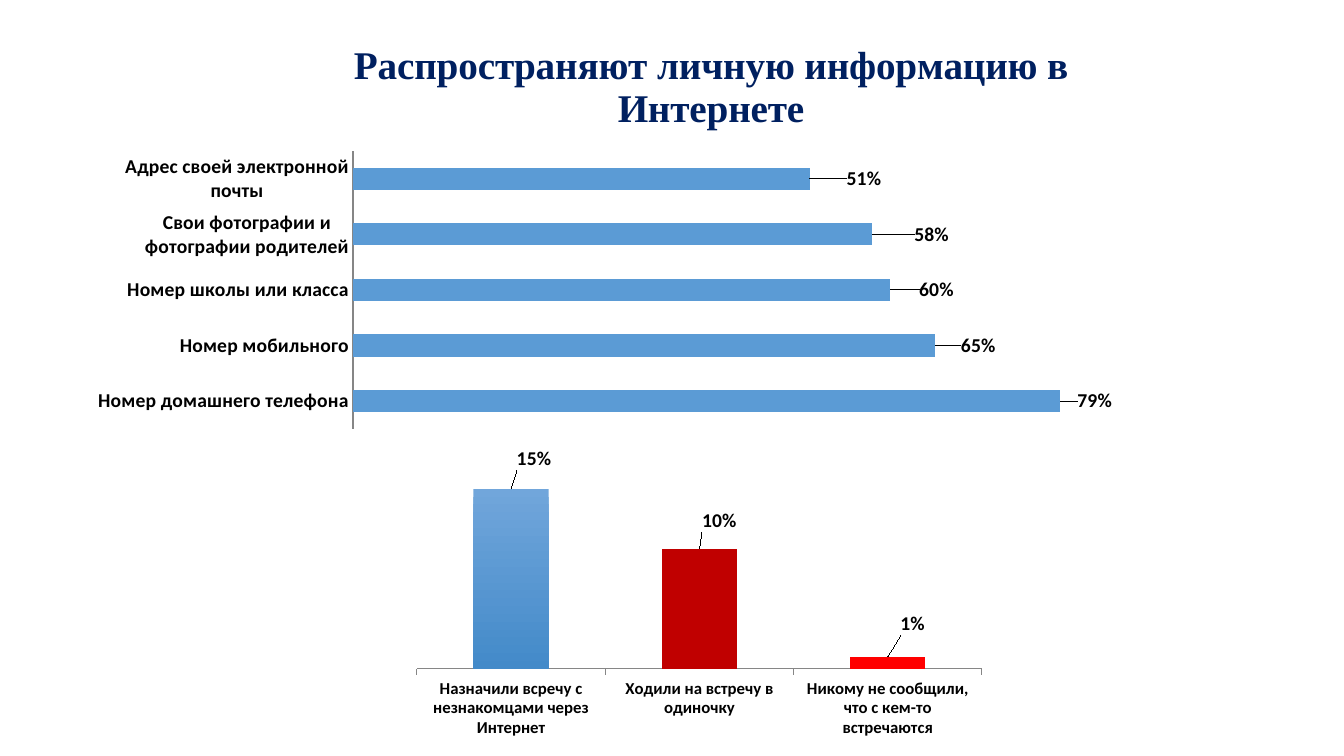
import pptx
import pptx.chart.data
import pptx.dml.color
import pptx.enum.chart
import pptx.oxml
import pptx.oxml.ns
import pptx.util

EMU_PER_PX = 914400 / 100.8
COLORS = {
    "title": "002060", "text": "000000", "axis": "868686", "bar": "5B9BD5",
    "met_top": "71A6DB", "met_bottom": "438AC9", "alone": "C00000", "untold": "FF0000",
}
LABEL_FONT = {"size": pptx.util.Pt(14), "bold": True}
TITLE_FONT = {"size": pptx.util.Pt(28), "bold": True, "name": "Times New Roman"}

# Label shifts are px away from the default place at the bar end.
SHARED_DATA = [
    ("Номер домашнего телефона", 0.79, (13, 0)),
    ("Номер мобильного", 0.65, (22, 0)),
    ("Номер школы или класса", 0.6, (25, 0)),
    ("Свои фотографии и фотографии родителей", 0.58, (38, 0)),
    ("Адрес своей электронной почты", 0.51, (33, 0)),
]
MEETINGS = [
    ("Назначили всречу с незнакомцами через Интернет", 0.15, (23, -14)),
    ("Ходили на встречу в одиночку", 0.1, (20, -12)),
    ("Никому не сообщили, что с кем-то встречаются", 0.01, (25, -17)),
]


def px(length):
    return round(length * EMU_PER_PX)


def rgb(name):
    return pptx.dml.color.RGBColor.from_string(COLORS[name])


def apply_format(target, values):
    for name, value in values.items():
        setattr(target, name, value)


def set_layout(parent, index, values):
    """Give a chart part a manual layout, as the child at the given index."""
    for old in parent.findall(pptx.oxml.ns.qn("c:layout")):
        parent.remove(old)
    items = "".join(f'<c:{tag} val="{value}"/>' for tag, value in values.items())
    parent.insert(index, pptx.oxml.parse_xml(
        f'<c:layout {pptx.oxml.ns.nsdecls("c")}><c:manualLayout>{items}'
        "</c:manualLayout></c:layout>"))


def fractions(box, frame):
    """Express a px box on the slide as shares of the chart frame."""
    left, top, width, height = frame
    return {"x": round((box[0] - left) / width, 4), "y": round((box[1] - top) / height, 4),
            "w": round(box[2] / width, 4), "h": round(box[3] / height, 4)}


def add_percent_chart(slide, kind, rows, frame, plot_box, top_value, axis_format, axis_size):
    data = pptx.chart.data.CategoryChartData(number_format="0%")
    data.categories = [name for name, _, _ in rows]
    data.add_series("Series 1", [value for _, value, _ in rows])
    chart = slide.shapes.add_chart(kind, *map(px, frame), data).chart
    apply_format(chart, {"has_legend": False, "has_title": False})
    apply_format(chart.font, {"size": pptx.util.Pt(10), "name": "Calibri"})
    chart.font.color.rgb = rgb("text")

    apply_format(chart.value_axis, {"visible": False, "has_major_gridlines": False,
                                    "minimum_scale": 0, "maximum_scale": top_value})
    apply_format(chart.category_axis, axis_format)
    apply_format(chart.category_axis.tick_labels.font,
                 {"size": pptx.util.Pt(axis_size), "bold": True})
    chart.category_axis.format.line.color.rgb = rgb("axis")
    chart.category_axis.format.line.width = pptx.util.Pt(0.75)

    plot = chart.plots[0]
    apply_format(plot, {"gap_width": 150, "vary_by_categories": False, "has_data_labels": True})
    plot_place = {"layoutTarget": "inner", "xMode": "edge", "yMode": "edge"}
    set_layout(chart.element.find(".//" + pptx.oxml.ns.qn("c:plotArea")), 0,
               plot_place | fractions(plot_box, frame))
    series = plot.series[0]
    series.format.fill.solid()
    series.format.fill.fore_color.rgb = rgb("bar")
    add_labels(series, rows, frame)
    return chart


def add_labels(series, rows, frame):
    labels = series.data_labels
    apply_format(labels, {"show_value": True, "number_format": "0%",
                          "number_format_is_linked": False})
    apply_format(labels.font, LABEL_FONT)
    for index, (_, _, (shift_x, shift_y)) in enumerate(rows):
        label = series.points[index].data_label
        apply_format(label.font, LABEL_FONT)
        label.position = pptx.enum.chart.XL_LABEL_POSITION.OUTSIDE_END
        element = labels._element.findall(pptx.oxml.ns.qn("c:dLbl"))[index]
        set_layout(element, 1, {"x": round(shift_x / frame[2], 4),
                                "y": round(shift_y / frame[3], 4)})


def add_chart_title(chart, text, corner, frame):
    title = chart.chart_title
    title.text_frame.text = text
    font = title.text_frame.paragraphs[0].runs[0].font
    apply_format(font, TITLE_FONT)
    font.color.rgb = rgb("title")
    place = fractions((*corner, 0, 0), frame)
    set_layout(title._element, 1,
               {"xMode": "edge", "yMode": "edge", "x": place["x"], "y": place["y"]})


def color_meetings(series):
    met = series.points[0].format.fill
    met.gradient()
    met.gradient_angle = 270
    for stop, name in zip(met.gradient_stops, ("met_top", "met_bottom")):
        stop.color.rgb = rgb(name)
    for index, name in enumerate(("alone", "untold"), start=1):
        fill = series.points[index].format.fill
        fill.solid()
        fill.fore_color.rgb = rgb(name)


def main():
    deck = pptx.Presentation()
    apply_format(deck, {"slide_width": px(1344), "slide_height": px(756)})
    slide = deck.slides.add_slide(deck.slide_layouts[6])
    kinds = pptx.enum.chart.XL_CHART_TYPE
    ticks = pptx.enum.chart.XL_TICK_MARK

    shared_frame = (77, 19, 1105, 417)
    shared = add_percent_chart(
        slide, kinds.BAR_CLUSTERED, SHARED_DATA, shared_frame, (353, 151, 806, 278), 0.9,
        {"major_tick_mark": ticks.NONE, "has_major_gridlines": False}, 14)
    add_chart_title(shared, "Распространяют личную информацию в Интернете",
                    (347, 33), shared_frame)

    meetings = add_percent_chart(
        slide, kinds.COLUMN_CLUSTERED, MEETINGS, (405, 447, 588, 294), (417, 474, 565, 194),
        0.16, {"major_tick_mark": ticks.OUTSIDE, "has_major_gridlines": False}, 12)
    color_meetings(meetings.plots[0].series[0])
    deck.save("out.pptx")


if __name__ == "__main__":
    main()
